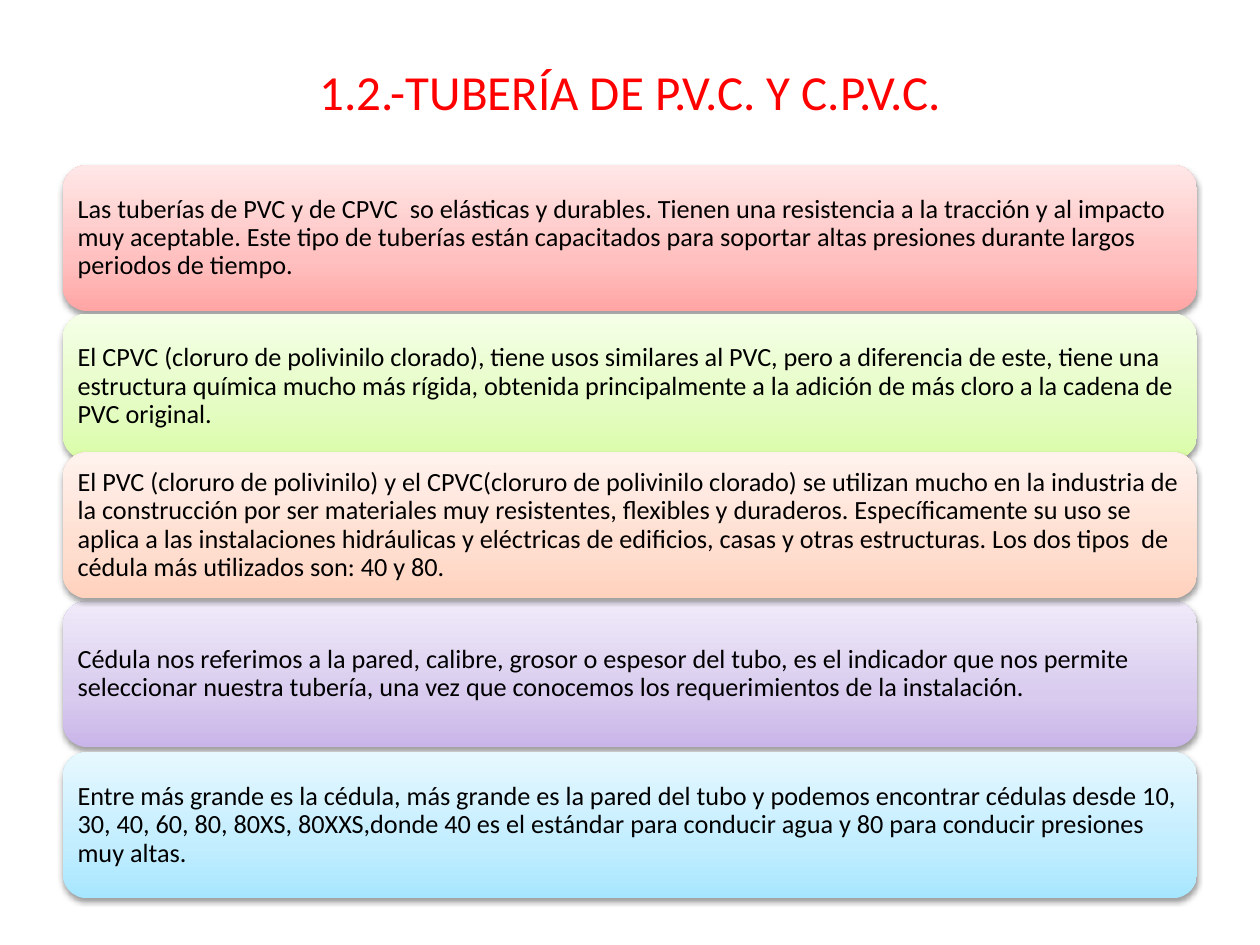
import copy
from dataclasses import dataclass

import pptx
import pptx.dml.color
import pptx.enum.shapes
import pptx.enum.text
import pptx.oxml
import pptx.oxml.ns
import pptx.util

Inches = pptx.util.Inches
Pt = pptx.util.Pt
RGB = pptx.dml.color.RGBColor.from_string


@dataclass(frozen=True)
class Theme:
    font: str = "Calibri"
    title_size: int = 28
    body_size: int = 15
    title: str = "FF0000"
    text: str = "000000"
    # Gradient colours from the bottom of a panel to its top
    red: tuple = ("FFA6A5", "FFC0BF", "FFE7E7")
    green: tuple = ("DAFDA7", "E4FCC2", "F5FFE7")
    orange: tuple = ("FFD2BD", "FFDED0", "FFF2ED")
    purple: tuple = ("C9B5E8", "D8CBEE", "F0EAF9")
    blue: tuple = ("A7E6FF", "C1EDFF", "E7F8FF")
    stops: tuple = (0, 0.35, 1)


theme = Theme()
SHADOW = (
    f'<a:outerShdw {pptx.oxml.ns.nsdecls("a")} blurRad="{Pt(3.1)}" dist="{Pt(1.6)}" '
    'dir="5400000" rotWithShape="0">'
    '<a:srgbClr val="000000"><a:alpha val="38000"/></a:srgbClr></a:outerShdw>'
)


def style_text(p, size, color):
    for r in p.runs:
        r.font.name = theme.font
        r.font.size = Pt(size)
        r.font.color.rgb = RGB(color)


def fill_panel(sp, colors):
    """Give a panel its three-stop vertical gradient and soft shadow."""
    sp.fill.gradient()
    sp.fill.gradient_angle = 90
    gs_lst = sp._element.spPr.find(".//" + pptx.oxml.ns.qn("a:gsLst"))
    gs_lst.insert(1, copy.deepcopy(gs_lst[0]))
    for stop, position, color in zip(sp.fill.gradient_stops, theme.stops, colors):
        stop.position = position
        stop.color.rgb = RGB(color)
    sp.line.fill.background()
    sp.shadow.inherit = False
    effects = sp._element.spPr.find(pptx.oxml.ns.qn("a:effectLst"))
    effects.append(pptx.oxml.parse_xml(SHADOW))


prs = pptx.Presentation()
prs.slide_width, prs.slide_height = Inches(10), Inches(7.5)
s = prs.slides.add_slide(prs.slide_layouts[5])

title = s.shapes.title
title.left, title.top = Inches(0.5), Inches(0.3)
title.width, title.height = Inches(9), Inches(0.85)
tf = title.text_frame
tf.text = "1.2.-TUBERÍA DE P.V.C. Y C.P.V.C."
tf.vertical_anchor = pptx.enum.text.MSO_ANCHOR.MIDDLE
tf.paragraphs[0].alignment = pptx.enum.text.PP_ALIGN.CENTER
style_text(tf.paragraphs[0], theme.title_size, theme.title)

# Top, gradient and text; the orange panel comes last because it overlaps the green one
panels = [
    (1.31, theme.red,
     "Las tuberías de PVC y de CPVC  so elásticas y durables. Tienen una resistencia a la "
     "tracción y al impacto muy aceptable. Este tipo de tuberías están capacitados para "
     "soportar altas presiones durante largos periodos de tiempo."),
    (2.49, theme.green,
     "El CPVC (cloruro de polivinilo clorado), tiene usos similares al PVC, pero a diferencia "
     "de este, tiene una estructura química mucho más rígida, obtenida principalmente a la "
     "adición de más cloro a la cadena de PVC original."),
    (4.77, theme.purple,
     "Cédula nos referimos a la pared, calibre, grosor o espesor del tubo, es el indicador que "
     "nos permite seleccionar nuestra tubería, una vez que conocemos los requerimientos de la "
     "instalación."),
    (5.97, theme.blue,
     "Entre más grande es la cédula, más grande es la pared del tubo y podemos encontrar "
     "cédulas desde 10, 30, 40, 60, 80, 80XS, 80XXS,donde 40 es el estándar para conducir agua "
     "y 80 para conducir presiones muy altas."),
    (3.59, theme.orange,
     "El PVC (cloruro de polivinilo) y el CPVC(cloruro de polivinilo clorado) se utilizan mucho "
     "en la industria de la construcción por ser materiales muy resistentes, flexibles y "
     "duraderos. Específicamente su uso se aplica a las instalaciones hidráulicas y eléctricas "
     "de edificios, casas y otras estructuras. Los dos tipos  de cédula más utilizados son: 40 "
     "y 80."),
]

for top, colors, text in panels:
    sp = s.shapes.add_shape(pptx.enum.shapes.MSO_SHAPE.ROUNDED_RECTANGLE,
                            Inches(0.5), Inches(top), Inches(9), Inches(1.16))
    fill_panel(sp, colors)
    tf = sp.text_frame
    tf.word_wrap = True
    tf.vertical_anchor = pptx.enum.text.MSO_ANCHOR.MIDDLE
    tf.margin_left = tf.margin_right = tf.margin_top = tf.margin_bottom = Inches(0.06)
    tf.text = text
    p = tf.paragraphs[0]
    p.alignment = pptx.enum.text.PP_ALIGN.LEFT
    p.line_spacing = 0.9
    style_text(p, theme.body_size, theme.text)

prs.save("out.pptx")
